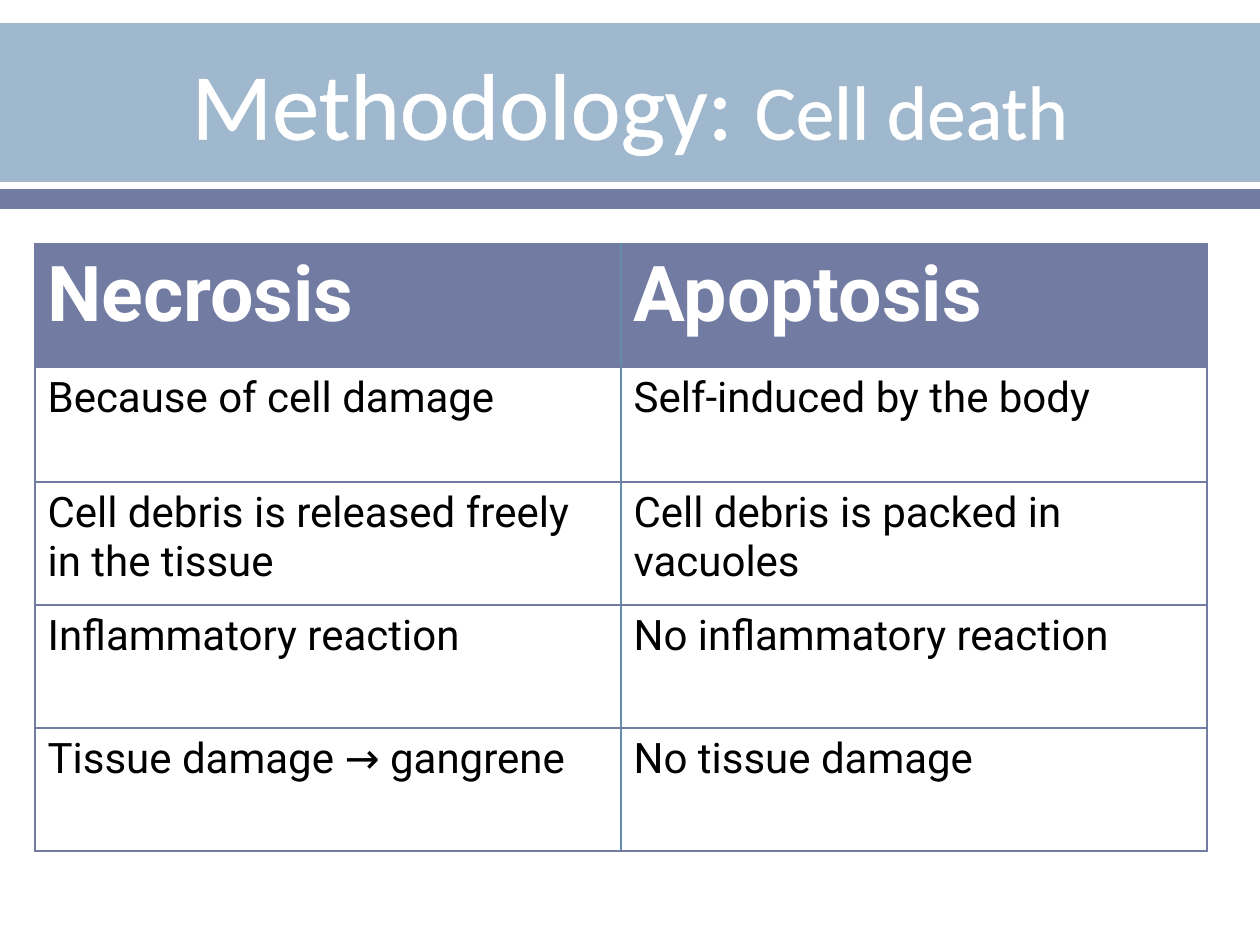
from dataclasses import dataclass

from lxml import etree
from pptx import Presentation
from pptx.dml.color import RGBColor
from pptx.enum.shapes import MSO_SHAPE
from pptx.enum.text import MSO_ANCHOR, PP_ALIGN
from pptx.oxml.ns import qn
from pptx.util import Emu, Pt

RECTANGLE = MSO_SHAPE.RECTANGLE
MIDDLE = MSO_ANCHOR.MIDDLE
CENTER = PP_ALIGN.CENTER

PX_PER_INCH = 126
COLORS = {
    "banner": "9FB8CD",
    "accent": "727CA3",
    "divider": "638CAE",
    "light": "FFFFFF",
    "dark": "000000",
}
OUTER_BORDER_PT = 0.79
DIVIDER_PT = 1
TITLE_OUTLINE_PT = 1.1


@dataclass(frozen=True)
class Band:
    top: int
    height: int
    color: str


@dataclass(frozen=True)
class Comparison:
    necrosis: str
    apoptosis: str
    height: int
    size: int = 24
    heading: bool = False


BANDS = [Band(23, 159, "banner"), Band(189, 20, "accent")]
TITLE_PARTS = [("Methodology: ", 54), ("Cell death", 44)]
COMPARISONS = [
    Comparison("Necrosis", "Apoptosis", 123, 44, True),
    Comparison("Because of cell damage", "Self-induced by the body", 115),
    Comparison("Cell debris is released freely in the tissue",
               "Cell debris is packed in vacuoles", 123),
    Comparison("Inflammatory reaction", "No inflammatory reaction", 123),
    Comparison("Tissue damage → gangrene", "No tissue damage", 123),
]


def px(length: int) -> Emu:
    return Emu(round(length * 914400 / PX_PER_INCH))


def rgb(name: str) -> RGBColor:
    return RGBColor.from_string(COLORS[name])


def make_line(tag: str, color: str, width: float):
    line = etree.Element(qn(tag), w=str(int(Pt(width))))
    fill = etree.SubElement(line, qn("a:solidFill"))
    etree.SubElement(fill, qn("a:srgbClr"), val=COLORS[color])
    return line


def draw_band(slide, band: Band, width: int) -> None:
    bar = slide.shapes.add_shape(RECTANGLE, 0, px(band.top), px(width), px(band.height))
    bar.shadow.inherit = False
    bar.fill.solid()
    bar.fill.fore_color.rgb = rgb(band.color)
    bar.line.fill.background()


def draw_title(slide) -> None:
    frame = slide.shapes.add_textbox(px(63), px(25), px(1134), px(154)).text_frame
    frame.word_wrap = True
    frame.vertical_anchor = MIDDLE
    heading = frame.paragraphs[0]
    heading.alignment = CENTER
    for wording, size in TITLE_PARTS:
        part = heading.add_run()
        part.text = wording
        part.font.name = "Calibri"
        part.font.size = Pt(size)
        part.font.color.rgb = rgb("light")
        part.font._element.insert(0, make_line("a:ln", "light", TITLE_OUTLINE_PT))


def draw_cell(cell, wording: str, row: Comparison, inner_side: str) -> None:
    cell.text = wording
    font = cell.text_frame.paragraphs[0].font
    font.name = "Roboto"
    font.size = Pt(row.size)
    font.bold = row.heading
    font.color.rgb = rgb("light" if row.heading else "dark")
    properties = cell._tc.get_or_add_tcPr()
    for side in ("a:lnL", "a:lnR", "a:lnT", "a:lnB"):
        inner = side == inner_side
        color = "divider" if inner else "accent"
        width = DIVIDER_PT if inner else OUTER_BORDER_PT
        properties.append(make_line(side, color, width))
    if row.heading:
        cell.fill.solid()
        cell.fill.fore_color.rgb = rgb("accent")
    else:
        cell.fill.background()


def draw_comparisons(slide, rows: list[Comparison]) -> None:
    height = sum(row.height for row in rows)
    table = slide.shapes.add_table(
        len(rows), 2, px(35), px(244), px(1172), px(height)).table
    table.horz_banding = False
    for index, row in enumerate(rows):
        table.rows[index].height = px(row.height)
        draw_cell(table.cell(index, 0), row.necrosis, row, "a:lnR")
        draw_cell(table.cell(index, 1), row.apoptosis, row, "a:lnL")


def main() -> None:
    """Build the slide that compares necrosis with apoptosis."""
    deck = Presentation()
    deck.slide_width, deck.slide_height = px(1260), px(945)
    slide = deck.slides.add_slide(deck.slide_layouts[6])
    for band in BANDS:
        draw_band(slide, band, 1260)
    draw_title(slide)
    draw_comparisons(slide, COMPARISONS)
    deck.save("out.pptx")


if __name__ == "__main__":
    main()
